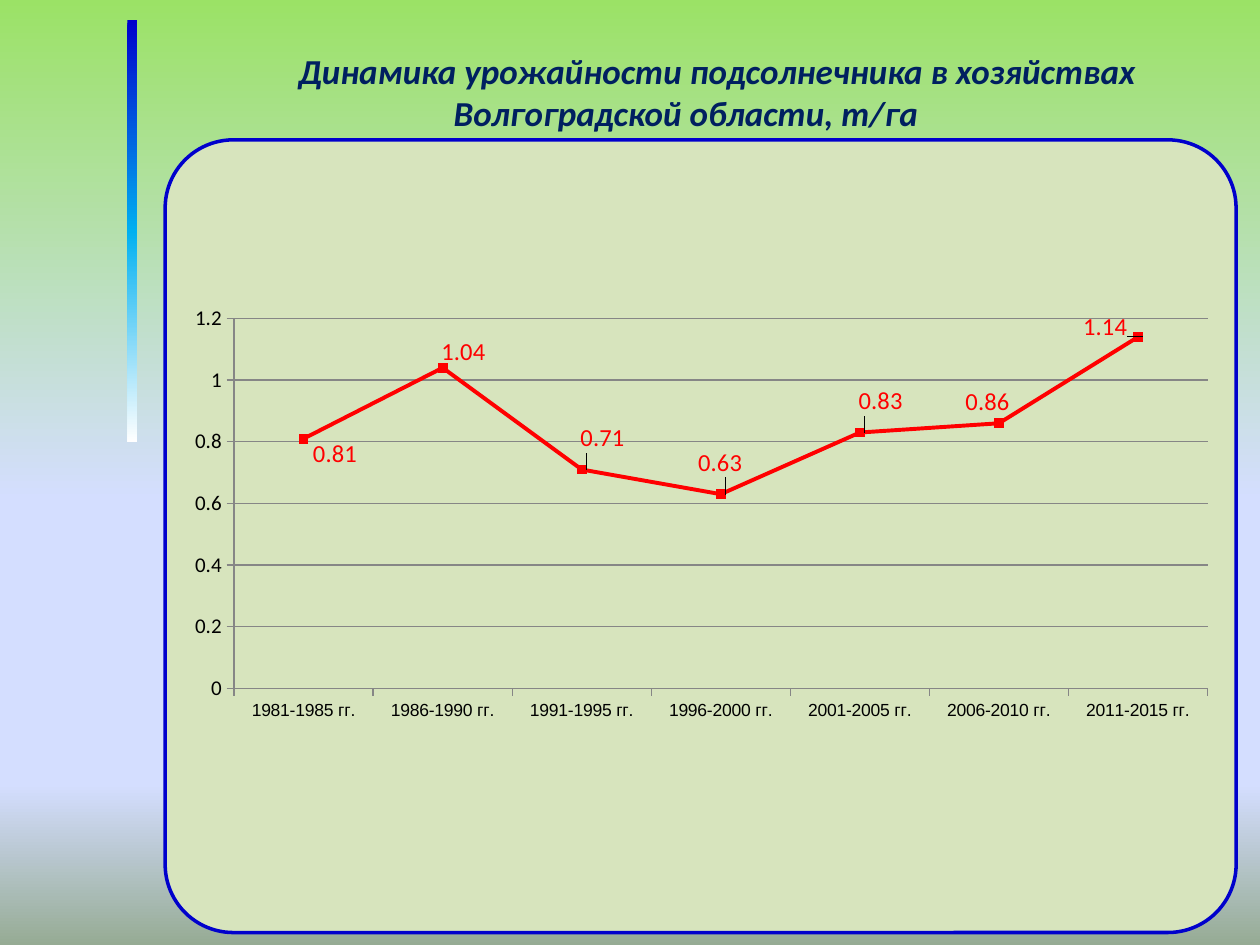
from dataclasses import dataclass

import lxml.etree
import pptx
import pptx.chart.data
import pptx.dml.color
import pptx.enum.chart
import pptx.enum.shapes
import pptx.enum.text
import pptx.oxml
import pptx.oxml.ns
import pptx.util
from pptx.util import Cm

COLORS = {
    "grass": "9BE266", "sky": "D4DEFF", "earth": "96AB94",
    "blue": "0000CC", "cyan": "00B0F0", "white": "FFFFFF",
    "panel": "D7E4BD", "title": "002060", "line": "FF0000",
    "grid": "868686", "text": "000000",
}


@dataclass
class Period:
    name: str
    crop: float
    dx: float
    dy: float


PERIODS = [
    Period("1981-1985 гг.", 0.81, 0, 0.03),
    Period("1986-1990 гг.", 1.04, -0.01, -0.03),
    Period("1991-1995 гг.", 0.71, -0.01, -0.06),
    Period("1996-2000 гг.", 0.63, -0.03, -0.06),
    Period("2001-2005 гг.", 0.83, -0.01, -0.06),
    Period("2006-2010 гг.", 0.86, -0.04, -0.04),
    Period("2011-2015 гг.", 1.14, -0.06, -0.02),
]


def rgb(name: str) -> pptx.dml.color.RGBColor:
    return pptx.dml.color.RGBColor.from_string(COLORS[name])


def set_gradient(fill, stops: list[tuple[int, str]]) -> None:
    fill.gradient()
    fill.gradient_angle = 270
    gs_lst = fill.gradient_stops[0]._gs.getparent()
    for gs in list(gs_lst):
        gs_lst.remove(gs)
    for pos, name in stops:
        gs = lxml.etree.SubElement(gs_lst, pptx.oxml.ns.qn("a:gs"), pos=str(pos * 1000))
        lxml.etree.SubElement(gs, pptx.oxml.ns.qn("a:srgbClr"), val=COLORS[name])


def make_layout(**parts: object):
    items = "".join(f'<c:{key} val="{val}"/>' for key, val in parts.items())
    ns = pptx.oxml.ns.nsdecls("c")
    return pptx.oxml.parse_xml(
        f"<c:layout {ns}><c:manualLayout>{items}</c:manualLayout></c:layout>")


def set_font(font, size: float, color: str, name: str = "Calibri") -> None:
    font.name = name
    font.size = pptx.util.Pt(size)
    font.color.rgb = rgb(color)
    font.bold = False


def add_shape(s, kind, x: float, y: float, w: float, h: float):
    sp = s.shapes.add_shape(kind, Cm(x), Cm(y), Cm(w), Cm(h))
    sp.shadow.inherit = False
    return sp


def add_title(s) -> None:
    sp = s.shapes.title
    sp.left, sp.top, sp.width, sp.height = Cm(2.77), Cm(0.86), Cm(22.12), Cm(1.96)
    tf = sp.text_frame
    tf.word_wrap = True
    tf.auto_size = pptx.enum.text.MSO_AUTO_SIZE.SHAPE_TO_FIT_TEXT
    tf.vertical_anchor = pptx.enum.text.MSO_ANCHOR.MIDDLE
    p = tf.paragraphs[0]
    p.alignment = pptx.enum.text.PP_ALIGN.CENTER
    p._p.get_or_add_pPr().set("indent", str(Cm(1.25)))
    r = p.add_run()
    r.text = "Динамика урожайности подсолнечника в хозяйствах Волгоградской области, т/га"
    set_font(r.font, 20, "title")
    r.font.bold = True
    r.font.italic = True


def format_axis(axis, size: float, font_name: str) -> None:
    set_font(axis.tick_labels.font, size, "text", font_name)
    axis.major_tick_mark = pptx.enum.chart.XL_TICK_MARK.OUTSIDE
    axis.minor_tick_mark = pptx.enum.chart.XL_TICK_MARK.NONE
    axis.format.line.color.rgb = rgb("grid")
    axis.format.line.width = pptx.util.Pt(0.75)


def format_series(series) -> None:
    series.smooth = False
    series.format.line.color.rgb = rgb("line")
    series.format.line.width = pptx.util.Pt(2.25)
    marker = series.marker
    marker.style = pptx.enum.chart.XL_MARKER_STYLE.SQUARE
    marker.size = 5
    marker.format.fill.solid()
    marker.format.fill.fore_color.rgb = rgb("line")
    marker.format.line.color.rgb = rgb("line")


def add_labels(chart, series) -> None:
    series.data_labels.show_value = True
    set_font(series.data_labels.font, 14, "line")
    for i in range(len(PERIODS)):
        label = series.points[i].data_label
        set_font(label.font, 14, "line")
        label.position = pptx.enum.chart.XL_LABEL_POSITION.RIGHT
    for period, label in zip(PERIODS, chart.element.xpath(".//c:dLbl")):
        label.insert(1, make_layout(x=period.dx, y=period.dy))


def add_chart(s) -> None:
    data = pptx.chart.data.CategoryChartData()
    data.categories = [period.name for period in PERIODS]
    data.add_series("Series 1", [period.crop for period in PERIODS])
    chart = s.shapes.add_chart(
        pptx.enum.chart.XL_CHART_TYPE.LINE_MARKERS,
        Cm(3.51), Cm(5.13), Cm(21.59), Cm(10.59), data).chart
    chart.has_legend = False
    chart.has_title = False
    set_font(chart.font, 18, "text")
    chart.plots[0].vary_by_categories = False
    format_axis(chart.category_axis, 10, "Arial")
    axis = chart.value_axis
    format_axis(axis, 12, "Calibri")
    axis.minimum_scale, axis.maximum_scale, axis.major_unit = 0, 1.2, 0.2
    axis.has_major_gridlines = True
    axis.major_gridlines.format.line.color.rgb = rgb("grid")
    axis.major_gridlines.format.line.width = pptx.util.Pt(0.75)
    series = chart.plots[0].series[0]
    format_series(series)
    add_labels(chart, series)
    area = chart.element.xpath(".//c:plotArea")[0]
    for old in area.xpath("./c:layout"):
        area.remove(old)
    area.insert(0, make_layout(layoutTarget="inner", xMode="edge", yMode="edge",
                               x=0.056, y=0.122, w=0.909, h=0.704))


def main() -> None:
    prs = pptx.Presentation()
    prs.slide_width, prs.slide_height = Cm(25.4), Cm(19.05)
    s = prs.slides.add_slide(prs.slide_layouts[5])
    set_gradient(s.background.fill,
                 [(0, "grass"), (53, "sky"), (83, "sky"), (100, "earth")])

    shapes = pptx.enum.shapes.MSO_SHAPE
    bar = add_shape(s, shapes.RECTANGLE, 2.57, 0.41, 0.2, 8.5)
    set_gradient(bar.fill, [(0, "blue"), (50, "cyan"), (100, "white")])
    bar.line.fill.background()

    panel = add_shape(s, shapes.ROUNDED_RECTANGLE, 3.33, 2.82, 21.59, 15.98)
    panel.adjustments[0] = 0.086
    panel.fill.solid()
    panel.fill.fore_color.rgb = rgb("panel")
    panel.line.color.rgb = rgb("blue")
    panel.line.width = pptx.util.Pt(2)

    add_title(s)
    add_chart(s)
    prs.save("out.pptx")


if __name__ == "__main__":
    main()
